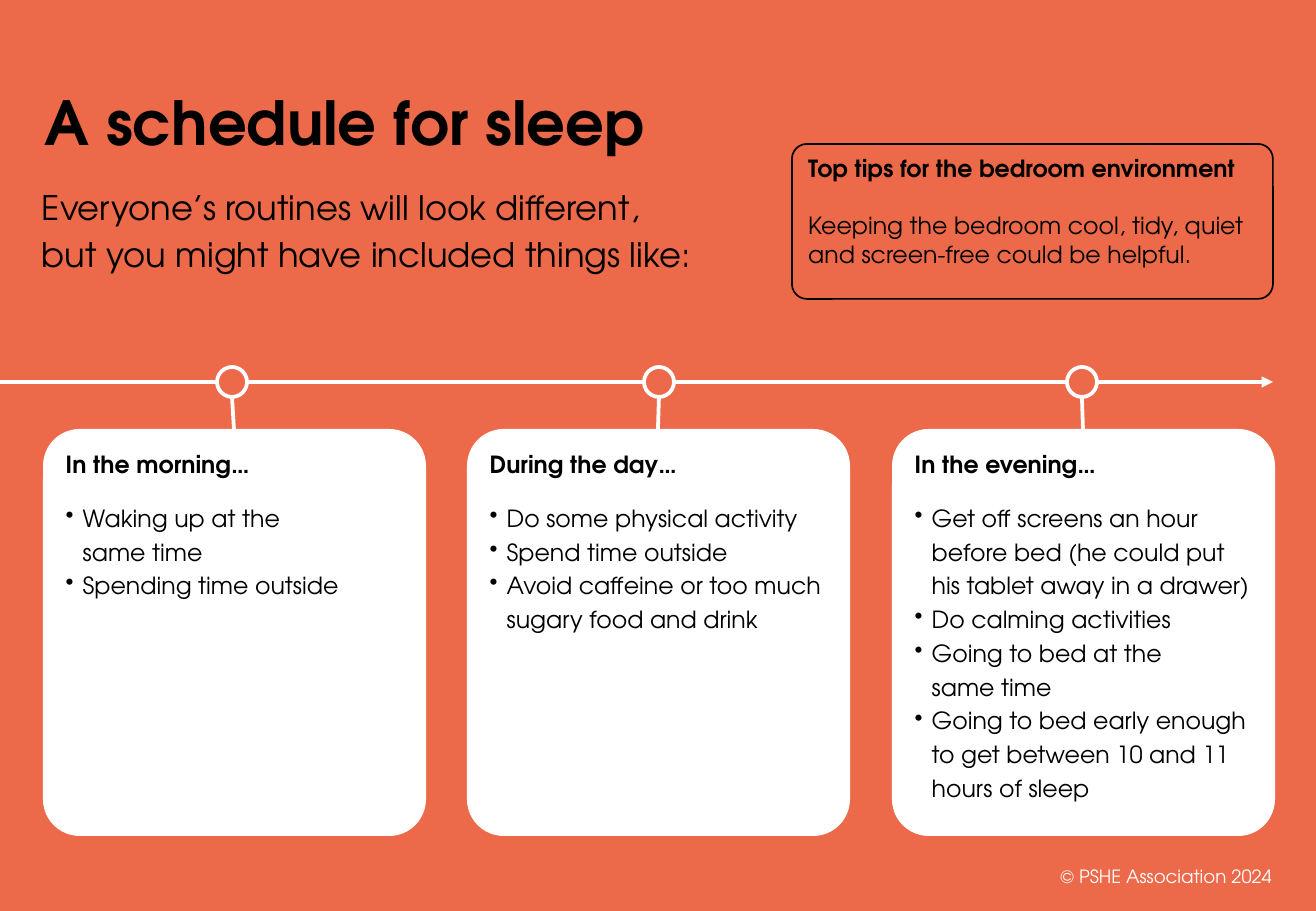
"""Builds the sleep schedule slide with a three-step timeline."""
from dataclasses import dataclass

from lxml import etree
from pptx import Presentation
from pptx.dml.color import RGBColor
from pptx.enum.shapes import MSO_CONNECTOR, MSO_SHAPE
from pptx.enum.text import MSO_ANCHOR, MSO_AUTO_SIZE, PP_ALIGN
from pptx.oxml.ns import qn
from pptx.util import Pt

LEFT, RIGHT = PP_ALIGN.LEFT, PP_ALIGN.RIGHT
TOP, MIDDLE, BOTTOM = MSO_ANCHOR.TOP, MSO_ANCHOR.MIDDLE, MSO_ANCHOR.BOTTOM
ROUNDED, OVAL = MSO_SHAPE.ROUNDED_RECTANGLE, MSO_SHAPE.OVAL
STRAIGHT = MSO_CONNECTOR.STRAIGHT
NO_FIT = MSO_AUTO_SIZE.NONE

TITLE = "A schedule for sleep"
INTRO = "Everyone’s routines will look different, but you might have included things like:"
TIP_HEADING = "Top tips for the bedroom environment"
TIP = "Keeping the bedroom cool, tidy, quiet and screen-free could be helpful."
COPYRIGHT = "© PSHE Association 2024"
STAGES = [
    ("In the morning…", 232, ["Waking up at the\vsame time", "Spending time outside"]),
    ("During the day…", 659, [
        "Do some physical activity",
        "Spend time outside",
        "Avoid caffeine or too much sugary food and drink",
    ]),
    ("In the evening…", 1082, [
        "Get off screens an hour before bed (he could put his tablet away in a drawer)",
        "Do calming activities",
        "Going to bed at the\vsame time",
        "Going to bed early enough to get between 10 and 11 hours of sleep",
    ]),
]


@dataclass(frozen=True)
class Theme:
    """Colours, font and type sizes of the slide."""
    coral: RGBColor = RGBColor(0xEC, 0x69, 0x4A)
    white: RGBColor = RGBColor(0xFF, 0xFF, 0xFF)
    black: RGBColor = RGBColor(0, 0, 0)
    font: str = "TeX Gyre Adventor"
    title: float = 36
    intro: float = 20
    body: float = 14
    small: float = 10.8
    stroke: float = 2.25
    outline: float = 1
    corner: float = 0.096


THEME = Theme()
PX = 7526
CARD_LEFT, CARD_TOP, CARD_WIDTH, CARD_HEIGHT = 43, 429, 383, 407
LAST_CARD_LEFT = 892
AXIS_Y, AXIS_END, NODE_SIZE = 382, 1273, 30
BULLET_INDENT = 17


def px(*lengths):
    """Turn pixel lengths into EMU."""
    return [length * PX for length in lengths]


def write(frame, text, size=THEME.body, color=THEME.black, bold=False, align=LEFT,
          spacing=None, before=0, after=0, bullet=False):
    """Add one formatted paragraph to a text frame."""
    first = frame.paragraphs[0]
    para = frame.add_paragraph() if first.runs else first
    para.text = text
    para.alignment = align
    para.space_before, para.space_after = Pt(before), Pt(after)
    if spacing:
        para.line_spacing = spacing
    if bullet:
        properties = para._p.get_or_add_pPr()
        properties.set("marL", str(BULLET_INDENT * PX))
        properties.set("indent", str(-BULLET_INDENT * PX))
        etree.SubElement(properties, qn("a:buChar")).set("char", "•")
    for span in para.runs:
        span.font.name = THEME.font
        span.font.size = Pt(size)
        span.font.bold = bold
        span.font.color.rgb = color


def prepare(frame, anchor):
    """Make a frame wrap at a fixed size and return it."""
    frame.word_wrap = True
    frame.auto_size = NO_FIT
    frame.vertical_anchor = anchor
    return frame


def add_box(page, kind, bounds, fill=None, line=None, width=THEME.outline):
    """Add a flat preset shape and return it."""
    box = page.shapes.add_shape(kind, *px(*bounds))
    box.shadow.inherit = False
    if kind == ROUNDED:
        box.adjustments[0] = THEME.corner
    if fill is None:
        box.fill.background()
    else:
        box.fill.solid()
        box.fill.fore_color.rgb = fill
    if line is None:
        box.line.fill.background()
    else:
        box.line.color.rgb = line
        box.line.width = Pt(width)
    return box


def add_line(page, start, end, arrow=False):
    """Add a white line, with an arrowhead at its end on request."""
    connector = page.shapes.add_connector(STRAIGHT, *px(*start, *end))
    connector.line.color.rgb = THEME.white
    connector.line.width = Pt(THEME.stroke)
    properties = connector._element.spPr
    if arrow:
        etree.SubElement(properties.find(qn("a:ln")), qn("a:tailEnd")).set("type", "triangle")
    etree.SubElement(properties, qn("a:effectLst"))


def add_header(page):
    """Add the title, introduction, tip box and copyright line."""
    title = page.shapes.title
    title.left, title.top, title.width, title.height = px(32, 72, 649, 92)
    write(prepare(title.text_frame, BOTTOM), TITLE, size=THEME.title, bold=True, spacing=Pt(43))

    intro = page.shapes.add_textbox(*px(30, 174, 682, 117))
    write(prepare(intro.text_frame, TOP), INTRO, size=THEME.intro, spacing=Pt(28))

    tip = prepare(add_box(page, ROUNDED, (792, 144, 481, 155), line=THEME.black).text_frame, TOP)
    write(tip, TIP_HEADING, bold=True)
    write(tip, TIP, before=17)

    credit = page.shapes.add_textbox(*px(988, 852, 296, 49))
    write(prepare(credit.text_frame, MIDDLE), COPYRIGHT, size=THEME.small,
          color=THEME.white, align=RIGHT)


def add_timeline(page):
    """Add the arrow and, for each stage, a node, a stem and a card."""
    add_line(page, (0, AXIS_Y), (AXIS_END, AXIS_Y), arrow=True)
    radius = NODE_SIZE // 2
    for index, (heading, node_x, habits) in enumerate(STAGES):
        left = CARD_LEFT + index * (LAST_CARD_LEFT - CARD_LEFT) // (len(STAGES) - 1)
        bounds = (left, CARD_TOP, CARD_WIDTH, CARD_HEIGHT)
        card = prepare(add_box(page, ROUNDED, bounds, fill=THEME.white).text_frame, TOP)
        write(card, heading, bold=True, spacing=1.14, after=12)
        for habit in habits:
            write(card, habit, spacing=Pt(20), bullet=True)
        add_box(page, OVAL, (node_x - radius, AXIS_Y - radius, NODE_SIZE, NODE_SIZE),
                fill=THEME.coral, line=THEME.white, width=THEME.stroke)
        add_line(page, (node_x, AXIS_Y + radius), (left + CARD_WIDTH // 2, CARD_TOP))


def main():
    """Build and save the deck."""
    deck = Presentation()
    deck.slide_width, deck.slide_height = px(1316, 911)
    page = deck.slides.add_slide(deck.slide_layouts.get_by_name("Title Only"))
    page.background.fill.solid()
    page.background.fill.fore_color.rgb = THEME.coral
    add_header(page)
    add_timeline(page)
    deck.save("out.pptx")


if __name__ == "__main__":
    main()
